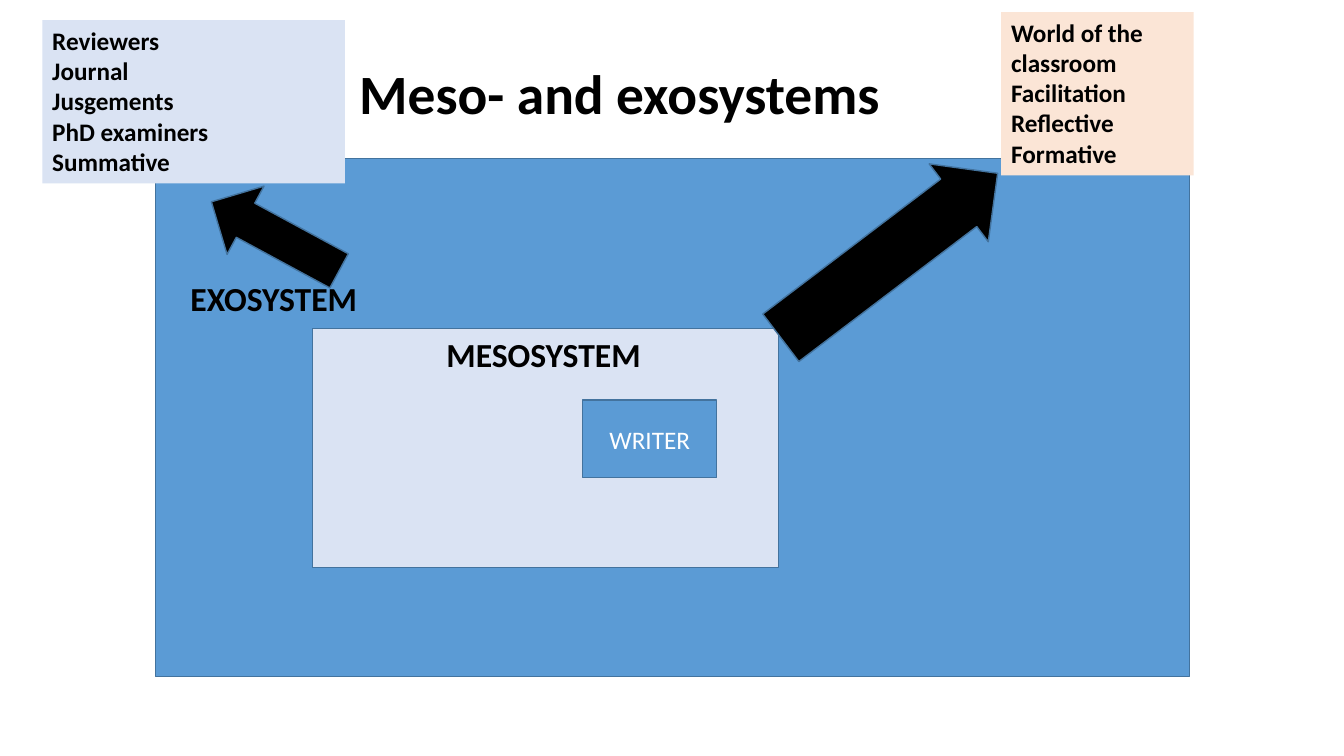
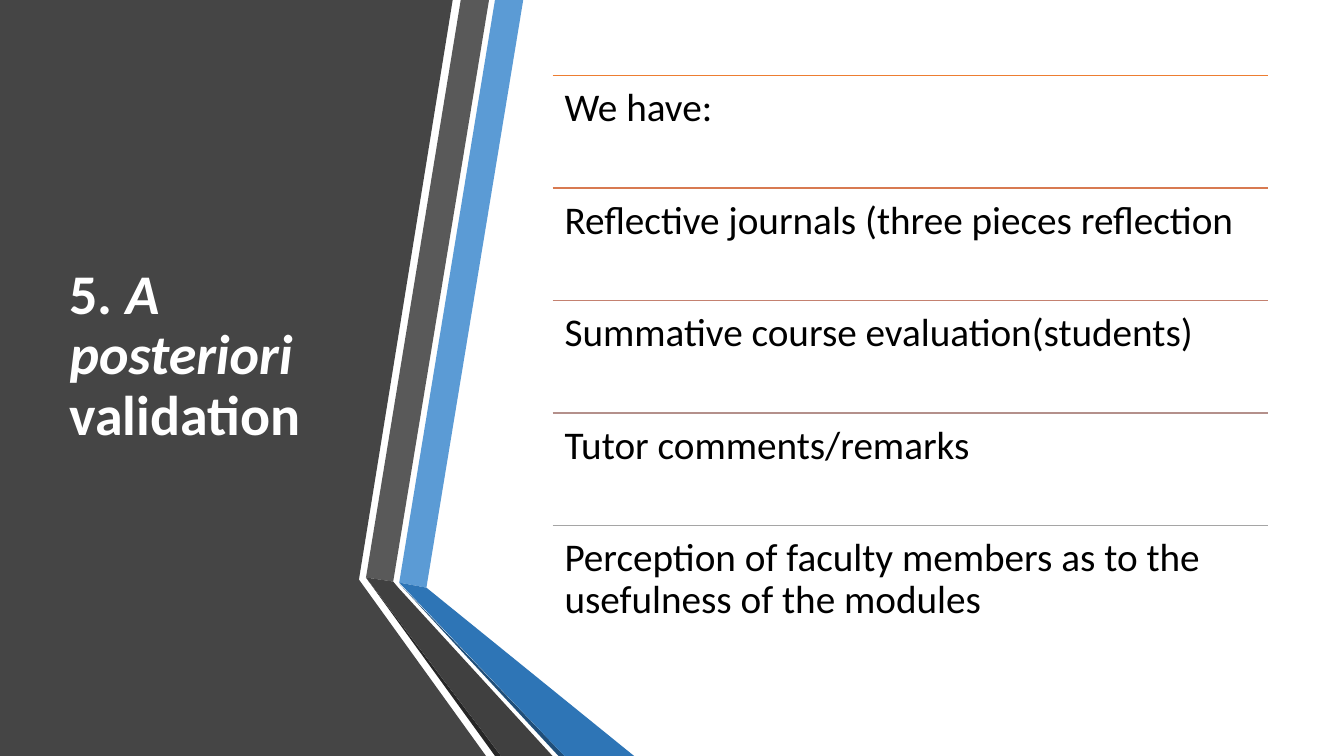
from dataclasses import dataclass

from lxml import etree
from pptx import Presentation
from pptx.dml.color import RGBColor
from pptx.enum import shapes, text
from pptx.oxml import ns
from pptx.util import Inches, Pt

Kind = shapes.MSO_SHAPE
Align = text.PP_ALIGN
Anchor = text.MSO_ANCHOR


@dataclass(frozen=True)
class Theme:
    font: str = "Calibri"
    black: str = "000000"
    white: str = "FFFFFF"
    blue: str = "5B9BD5"
    pale_blue: str = "DAE3F3"
    peach: str = "FBE5D6"
    outline: str = "43739E"
    panel: str = "454545"
    title_size: float = 40
    list_size: float = 28
    label_size: float = 24
    body_size: float = 18
    line_width: float = 1
    line_spacing: float = 0.9


class SlideBuilder:
    """Holds the deck, its theme and the slide being drawn."""

    def __init__(self, theme):
        self.theme = theme
        self.deck = Presentation()
        self.deck.slide_width, self.deck.slide_height = Inches(13.33), Inches(7.5)
        self.page = None

    def new_page(self):
        self.page = self.deck.slides.add_slide(self.deck.slide_layouts[5])

    def style(self, span, size, color, bold=False, italic=False):
        font = span.font
        font.name, font.size = self.theme.font, Pt(size)
        font.bold, font.italic = bold, italic
        font.color.rgb = RGBColor.from_string(color)

    def paint(self, shape, fill, line=None):
        shape.shadow.inherit = False
        shape.fill.solid()
        shape.fill.fore_color.rgb = RGBColor.from_string(fill)
        if line:
            shape.line.color.rgb = RGBColor.from_string(line)
            shape.line.width = Pt(self.theme.line_width)
        else:
            shape.line.fill.background()

    def fill_text(self, frame, lines, size, color, bold=False, align=Align.LEFT, spacing=1.0):
        frame.word_wrap = True
        frame.text = "\n".join(lines)
        for para in frame.paragraphs:
            para.alignment, para.line_spacing = align, spacing
            for span in para.runs:
                self.style(span, size, color, bold)

    def title(self, box, spans, color, align=Align.LEFT, size=None):
        """Place the title on top of what is drawn; spans are (text, italic) pairs."""
        holder = self.page.shapes.title
        holder.element.getparent().append(holder.element)
        holder.left, holder.top, holder.width, holder.height = map(Inches, box)
        frame = holder.text_frame
        frame.auto_size = text.MSO_AUTO_SIZE.NONE
        frame.vertical_anchor, frame.word_wrap = Anchor.MIDDLE, True
        para = frame.paragraphs[0]
        para.alignment, para.line_spacing = align, self.theme.line_spacing
        for wording, italic in spans:
            if wording == "\n":
                para.add_line_break()
                continue
            span = para.add_run()
            span.text = wording
            self.style(span, size or self.theme.title_size, color, True, italic)

    def rectangle(self, box, fill, label=None):
        shape = self.page.shapes.add_shape(Kind.RECTANGLE, *map(Inches, box))
        self.paint(shape, fill, self.theme.outline)
        if label:
            shape.text_frame.vertical_anchor = Anchor.MIDDLE
            self.fill_text(shape.text_frame, [label], self.theme.body_size,
                           self.theme.white, align=Align.CENTER)

    def arrow(self, kind, box, rotation, thickness=0.5):
        shape = self.page.shapes.add_shape(kind, *map(Inches, box))
        shape.adjustments[0] = thickness
        shape.rotation = rotation
        self.paint(shape, self.theme.black, self.theme.outline)

    def text_box(self, box, lines, size, fill=None, bold=True, margin=None, spacing=1.0):
        shape = self.page.shapes.add_textbox(*map(Inches, box))
        if fill:
            self.paint(shape, fill)
        frame = shape.text_frame
        if margin:
            frame.margin_left = frame.margin_right = Inches(margin)
            frame.margin_top = frame.margin_bottom = Inches(margin)
        self.fill_text(frame, lines, size, self.theme.black, bold, spacing=spacing)

    def polygon(self, points, fill):
        corners = [(Inches(x), Inches(y)) for x, y in points]
        outline = self.page.shapes.build_freeform(*corners[0])
        outline.add_line_segments(corners[1:], close=True)
        self.paint(outline.convert_to_shape(), fill)

    def rule(self, left, right, top, color):
        line = self.page.shapes.add_connector(
            shapes.MSO_CONNECTOR.STRAIGHT,
            Inches(left), Inches(top), Inches(right), Inches(top))
        line.line.color.rgb = RGBColor.from_string(color)
        line.line.width = Pt(self.theme.line_width)
        etree.SubElement(line.element.spPr, ns.qn("a:effectLst"))


def systems_page(builder):
    theme = builder.theme
    builder.new_page()
    builder.title((3.41, 0.34, 5.47, 1.23), [("Meso- and exosystems ", False)],
                  theme.black, Align.CENTER, size=39.6)

    builder.rectangle((1.54, 1.57, 10.26, 5.14), theme.blue)
    builder.rectangle((3.1, 3.26, 4.62, 2.37), theme.pale_blue)
    builder.rectangle((5.78, 3.97, 1.33, 0.77), theme.blue, "WRITER")
    builder.text_box((4.33, 3.26, 2.33, 0.5), ["MESOSYSTEM"], theme.label_size)
    builder.text_box((1.79, 2.71, 2.12, 0.5), ["EXOSYSTEM"], theme.label_size)

    builder.text_box((0.42, 0.2, 3, 1.62),
                     ["Reviewers", "Journal", "Jusgements", "PhD examiners", "Summative"],
                     theme.body_size, theme.pale_blue)
    builder.text_box((9.93, 0.12, 1.91, 1.62),
                     ["World of the classroom", "Facilitation", "Reflective", "Formative"],
                     theme.body_size, theme.peach)

    builder.arrow(Kind.RIGHT_ARROW, (7.47, 2.05, 2.7, 0.97), 322.8, 0.61)
    builder.arrow(Kind.LEFT_ARROW, (2.01, 1.96, 1.44, 0.77), 28.4)


def validation_page(builder):
    theme = builder.theme
    builder.new_page()

    side_panel = [(0, 0), (3.53, 0), (4.49, 0), (3.56, 5.75), (4.82, 7.5), (0, 7.5)]
    ribbons = [
        (theme.blue, [(3.96, 5.78), (4.23, 5.83), (5.19, 0), (4.91, 0)]),
        ("595959", [(4.85, 0), (4.57, 0), (3.63, 5.73), (3.9, 5.77)]),
        ("262626", [(3.63, 5.73), (4.91, 7.5), (4.97, 7.5)]),
        ("1F4E79", [(3.96, 5.79), (5.54, 7.5), (5.6, 7.5)]),
        ("2E75B6", [(3.96, 5.78), (5.6, 7.5), (6.29, 7.5), (4.23, 5.83)]),
        ("404040", [(5.48, 7.5), (3.95, 5.83), (3.9, 5.77), (3.63, 5.73), (4.97, 7.5)]),
    ]
    for fill, points in [(theme.panel, side_panel)] + ribbons:
        builder.polygon(points, fill)

    builder.title((0.59, 0.75, 3.04, 5.58),
                  [("5. ", False), ("A posteriori", True), ("\n", False),
                   ("validation", False)], theme.white)

    left, top, width, bottom = 5.48, 0.75, 7.1, 6.33
    evidence = [
        ("ED7D31", "We have:"),
        ("D87A51", "Reflective journals (three pieces reflection"),
        ("C48170", "Summative course evaluation(students)"),
        ("B4908B", "Tutor comments/remarks"),
        ("A5A5A5", "Perception of faculty members as to the usefulness of the modules"),
    ]
    row_height = (bottom - top) / len(evidence)
    for row, (color, wording) in enumerate(evidence):
        row_top = top + row * row_height
        builder.rule(left, left + width, row_top, color)
        builder.text_box((left, row_top, width, row_height), [wording], theme.list_size,
                         bold=False, margin=0.12, spacing=theme.line_spacing)


def main():
    builder = SlideBuilder(Theme())
    systems_page(builder)
    validation_page(builder)
    builder.deck.save("out.pptx")


if __name__ == "__main__":
    main()
